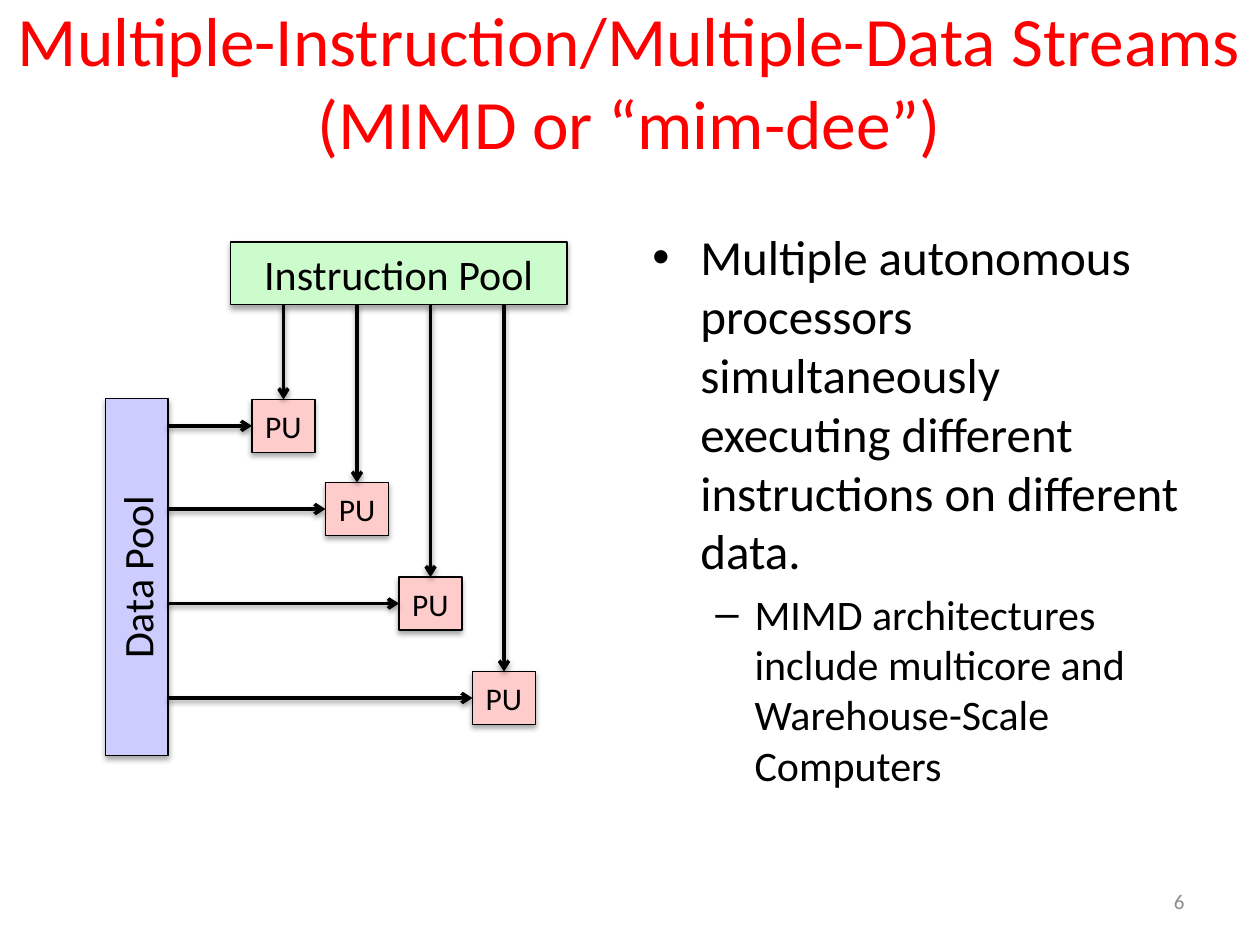
"""Build the slide on MIMD streams with its pool diagram."""
from dataclasses import dataclass

from lxml import etree
from pptx import Presentation
from pptx.dml.color import RGBColor
from pptx.enum.shapes import MSO_CONNECTOR, MSO_SHAPE
from pptx.enum.text import MSO_ANCHOR, PP_ALIGN
from pptx.oxml.ns import qn
from pptx.util import Inches, Pt

RECT, LINE = MSO_SHAPE.RECTANGLE, MSO_CONNECTOR.STRAIGHT
TOP, MIDDLE = MSO_ANCHOR.TOP, MSO_ANCHOR.MIDDLE
LEFT, CENTER, RIGHT = PP_ALIGN.LEFT, PP_ALIGN.CENTER, PP_ALIGN.RIGHT


@dataclass
class Theme:
    """Hold the font, colours and type sizes."""
    font: str = "Calibri"
    black: str = "000000"
    red: str = "FF0000"
    gray: str = "8C8C8C"
    green: str = "CCFCCC"
    pink: str = "FFCCCC"
    blue: str = "CCCCFE"
    title: float = 39.6
    body: float = 28
    sub: float = 24
    pool: float = 24
    unit: float = 18
    foot: float = 12


THEME = Theme()
TITLE = "Multiple-Instruction/Multiple-Data Streams\v(MIMD or “mim-dee”)"
POINTS = [
    ("Multiple autonomous processors simultaneously executing different "
     "instructions on different data.", 0, "•", 0.38, 0.38, THEME.body),
    ("MIMD architectures include multicore and Warehouse-Scale Computers",
     1, "–", 0.81, 0.31, THEME.sub),
]
NUMBER = "6"
CODE = ("Instruction Pool", (1.83, 1.92, 2.67, 0.5))
DATA = ("Data Pool", (-0.33, 4.33, 2.83, 0.5))
UNIT = "PU"
UNIT_X, STEP = 2, 7 / 12
UNIT_W, UNIT_H = 0.5, 0.42
UNIT_TOPS = [3.17, 3.83, 4.58, 5.33]
CODE_END, DATA_END = 2.42, 1.33


def put_text(para, text, size, color=THEME.black, align=LEFT):
    """Write formatted text into a paragraph."""
    para.text = text
    para.alignment = align
    for run in para.runs:
        run.font.name = THEME.font
        run.font.size = Pt(size)
        run.font.color.rgb = RGBColor.from_string(color)


def add_box(slide, box, anchor=MIDDLE):
    """Add a wrapping text box and return its frame."""
    frame = slide.shapes.add_textbox(*map(Inches, box)).text_frame
    frame.word_wrap = True
    frame.vertical_anchor = anchor
    return frame


def add_shade(shape, alpha, dist):
    """Give a shape or connector a soft shadow below it."""
    props = shape._element.spPr
    for old in props.findall(qn("a:effectLst")):
        props.remove(old)
    effect = etree.SubElement(props, qn("a:effectLst"))
    shade = etree.SubElement(
        effect, qn("a:outerShdw"), blurRad=str(Pt(3.1)), dist=str(Pt(dist)),
        dir="5400000", rotWithShape="0")
    color = etree.SubElement(shade, qn("a:srgbClr"), val=THEME.black)
    etree.SubElement(color, qn("a:alpha"), val=str(alpha * 1000))


def add_rect(slide, text, box, fill, size, turn=0):
    """Add a filled, labelled rectangle."""
    rect = slide.shapes.add_shape(RECT, *map(Inches, box))
    rect.rotation = turn
    rect.fill.solid()
    rect.fill.fore_color.rgb = RGBColor.from_string(fill)
    rect.line.color.rgb = RGBColor.from_string(THEME.black)
    rect.line.width = Pt(0.75)
    add_shade(rect, 35, 1.8)
    rect.text_frame.vertical_anchor = MIDDLE
    put_text(rect.text_frame.paragraphs[0], text, size, align=CENTER)
    return rect


def add_arrow(slide, start, end, unit, side):
    """Draw an arrow that ends joined to one side of a unit."""
    arrow = slide.shapes.add_connector(LINE, *map(Inches, start + end))
    arrow.end_connect(unit, side)
    arrow.line.color.rgb = RGBColor.from_string(THEME.black)
    arrow.line.width = Pt(2)
    etree.SubElement(arrow.line._get_or_add_ln(), qn("a:tailEnd"), type="arrow")
    add_shade(arrow, 38, 1.6)


def add_points(slide):
    """Add the bulleted text."""
    frame = add_box(slide, (5.08, 1.75, 4.42, 4.95), TOP)
    for i, (text, level, mark, left, hang, size) in enumerate(POINTS):
        para = frame.add_paragraph() if i else frame.paragraphs[0]
        put_text(para, text, size)
        para.level = level
        para.space_before = Pt(size * 0.2)
        props = para._p.get_or_add_pPr()
        props.set("marL", str(Inches(left)))
        props.set("indent", str(-Inches(hang)))
        etree.SubElement(props, qn("a:buFont"), typeface="Arial")
        etree.SubElement(props, qn("a:buChar"), char=mark)


def add_chart(slide):
    """Draw both pools and the units they feed."""
    add_rect(slide, *CODE, THEME.green, THEME.pool)
    add_rect(slide, *DATA, THEME.blue, THEME.pool, turn=270)
    for i, top in enumerate(UNIT_TOPS):
        left = UNIT_X + i * STEP
        unit = add_rect(slide, UNIT, (left, top, UNIT_W, UNIT_H),
                        THEME.pink, THEME.unit)
        mid_x, mid_y = left + UNIT_W / 2, top + UNIT_H / 2
        add_arrow(slide, (DATA_END, mid_y), (left, mid_y), unit, 1)
        add_arrow(slide, (mid_x, CODE_END), (mid_x, top), unit, 0)


def main():
    """Build and save the slide."""
    deck = Presentation()
    deck.slide_width, deck.slide_height = Inches(10), Inches(7.5)
    slide = deck.slides.add_slide(deck.slide_layouts[6])
    head = add_box(slide, (-0.17, 0.3, 10.33, 1.25))
    head.margin_bottom = Inches(0.62)
    put_text(head.paragraphs[0], TITLE, THEME.title, THEME.red, CENTER)
    add_points(slide)
    foot = add_box(slide, (7.17, 6.95, 2.33, 0.4))
    put_text(foot.paragraphs[0], NUMBER, THEME.foot, THEME.gray, RIGHT)
    add_chart(slide)
    deck.save("out.pptx")


if __name__ == "__main__":
    main()
